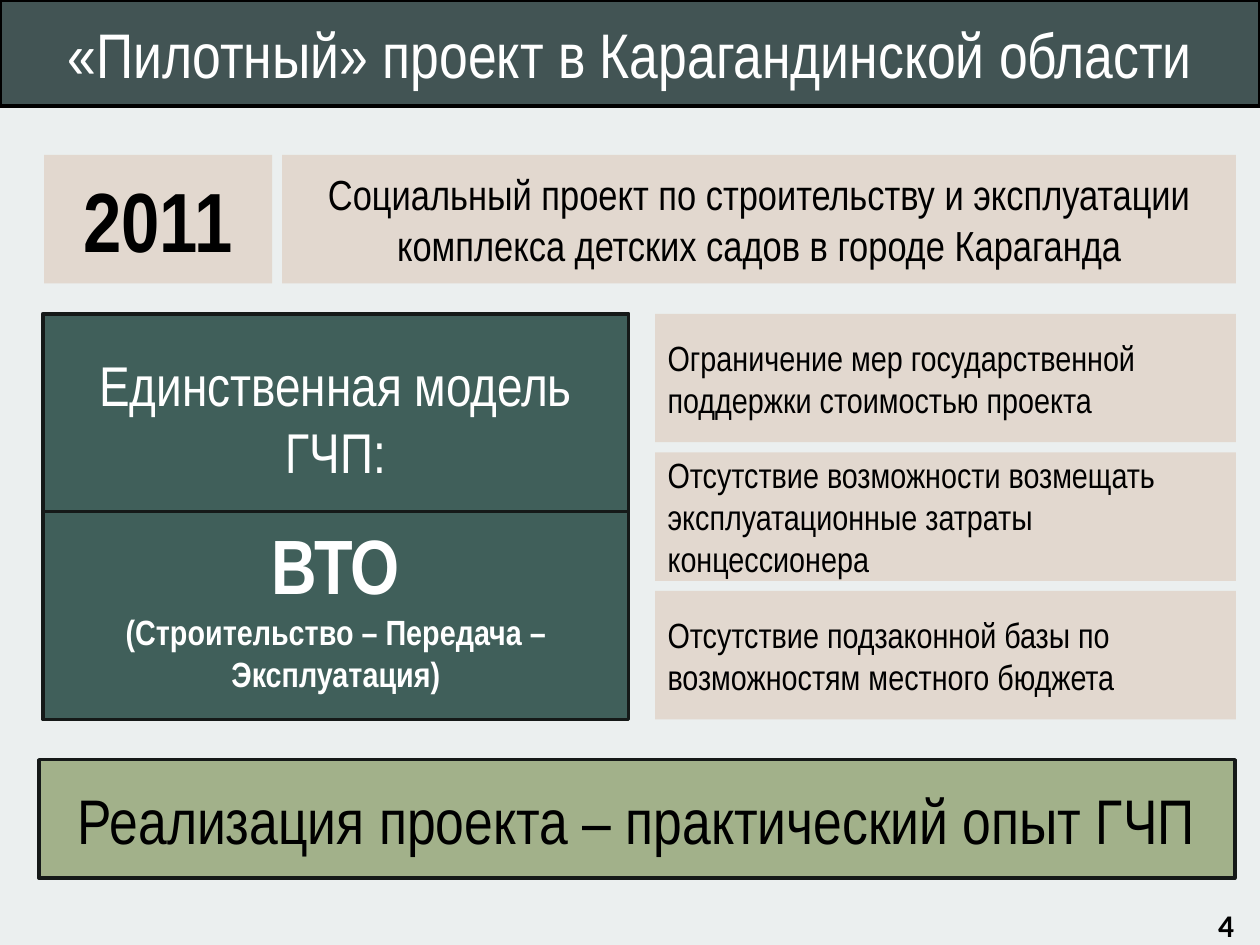
import pptx
import pptx.util
import pptx.dml.color
import pptx.enum.shapes
import pptx.enum.text

Inches = pptx.util.Inches
Align = pptx.enum.text.PP_ALIGN
Anchor = pptx.enum.text.MSO_ANCHOR

slide_width, slide_height = 10, 7.5
left_column, right_column, right_edge = 0.34, 5.2, 9.81
year_row, model_row, conclusion_row = 1.23, 2.49, 6.03
row_height, row_pitch = 1.02, 1.1
column_width = right_edge - right_column
model_width, model_height = 4.65, 1.65
year_width, project_column = 1.81, 2.24


def paint(color_format, color):
    color_format.rgb = pptx.dml.color.RGBColor.from_string(color)


def format_box(shape, box, fill, line, paragraphs, color,
               align=Align.CENTER, anchor=Anchor.MIDDLE):
    shape.left, shape.top, shape.width, shape.height = map(Inches, box)
    shape.shadow.inherit = False
    if fill:
        shape.fill.solid()
        paint(shape.fill.fore_color, fill)
    if line:
        paint(shape.line.color, line)
        shape.line.width = pptx.util.Pt(2)
    else:
        shape.line.fill.background()
    frame = shape.text_frame
    frame.word_wrap = True
    frame.auto_size = pptx.enum.text.MSO_AUTO_SIZE.NONE
    frame.vertical_anchor = anchor
    for index, (text, size, bold, font) in enumerate(paragraphs):
        paragraph = frame.add_paragraph() if index else frame.paragraphs[0]
        paragraph.alignment = align
        run = paragraph.add_run()
        run.text = text
        run.font.name = font
        run.font.size = pptx.util.Pt(size)
        run.font.bold = bold
        paint(run.font.color, color)


presentation = pptx.Presentation()
presentation.slide_width = Inches(slide_width)
presentation.slide_height = Inches(slide_height)
slide = presentation.slides.add_slide(presentation.slide_layouts[5])
slide.background.fill.solid()
paint(slide.background.fill.fore_color, "EBEFEF")

narrow = "Arial Narrow"
format_box(slide.shapes.title, (0, 0, slide_width, 0.84), "425454", "000000",
           [("«Пилотный» проект в Карагандинской области", 36, False, narrow)], "FFFFFF")

beige, green, dark = "E2D8CF", "405F5A", "151918"
boxes = [
    ((left_column + 0.01, year_row, year_width, row_height), beige, None,
     [("2011", 48, True, narrow)], "000000"),
    ((left_column - 0.03, conclusion_row, 9.49, 0.94), "A2B18A", dark,
     [("Реализация проекта – практический опыт ГЧП", 36, False, narrow)], "000000"),
    ((left_column, model_row, model_width, model_height), green, dark,
     [("Единственная модель ГЧП:", 32, False, narrow)], "FFFFFF"),
    ((project_column, year_row, right_edge - project_column, row_height), beige, None,
     [("Социальный проект по строительству и эксплуатации комплекса детских садов "
       "в городе Караганда", 24, False, narrow)], "000000"),
]

limitations = [
    "Ограничение мер государственной поддержки стоимостью проекта",
    "Отсутствие возможности возмещать эксплуатационные затраты концессионера",
    "Отсутствие подзаконной базы по возможностям местного бюджета",
]
for row, limitation in enumerate(limitations):
    boxes.append(((right_column, model_row + row * row_pitch, column_width, row_height),
                  beige, None, [(limitation, 20, False, narrow)], "000000", Align.LEFT))

model_bottom = model_row + 2 * row_pitch + row_height
boxes.append(((left_column, model_bottom - model_height, model_width, model_height), green, dark,
              [("ВТО", 44, True, narrow),
               ("(Строительство – Передача – Эксплуатация)", 20, True, narrow)],
              "FFFFFF", Align.CENTER, Anchor.TOP))

for box in boxes:
    rectangle = slide.shapes.add_shape(pptx.enum.shapes.MSO_SHAPE.RECTANGLE, 0, 0, 0, 0)
    format_box(rectangle, *box)

page_number = slide.shapes.add_textbox(0, 0, 0, 0)
format_box(page_number, (slide_width - 0.43, 7.14, 0.43, 0.4), None, None,
           [("4", 18, True, "Calibri")], "000000", Align.LEFT, Anchor.TOP)

presentation.save("out.pptx")
